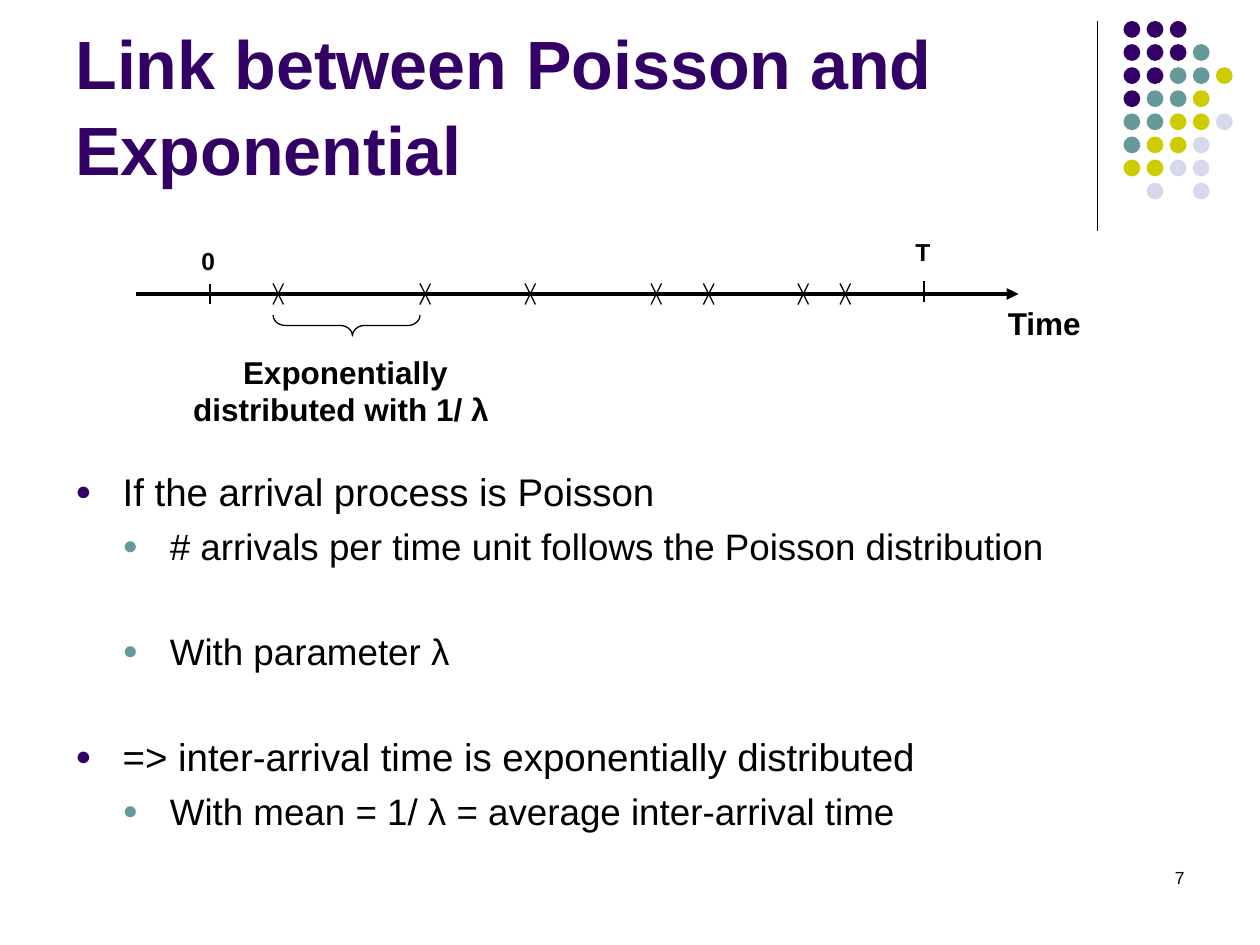
import pptx
import pptx.util
import pptx.dml.color
import pptx.enum.shapes
import pptx.enum.text
import pptx.oxml.ns
import lxml.etree

PX = 7620  # 120 px to the inch
BLACK, PURPLE, TEAL = "000000", "330066", "669999"
color = pptx.dml.color.RGBColor.from_string
qn = pptx.oxml.ns.qn
Align = pptx.enum.text.PP_ALIGN
Anchor = pptx.enum.text.MSO_ANCHOR
Shape = pptx.enum.shapes.MSO_SHAPE

presentation = pptx.Presentation()
presentation.slide_width = 1200 * PX
presentation.slide_height = 900 * PX
slide = presentation.slides.add_slide(presentation.slide_layouts[6])


def add_text(box, text, size=18, bold=False, fill=BLACK, align=Align.LEFT,
             anchor=Anchor.TOP, wrap=True, spacing=1.0):
    """Add a text box at box (left, top, width, height); each line is a paragraph."""
    shape = slide.shapes.add_textbox(*(value * PX for value in box))
    frame = shape.text_frame
    frame.word_wrap = wrap
    frame.vertical_anchor = anchor
    frame.text = text
    for paragraph in frame.paragraphs:
        paragraph.alignment = align
        paragraph.line_spacing = spacing
        font = paragraph.font
        font.name, font.size, font.bold = "Arial", pptx.util.Pt(size), bold
        font.color.rgb = color(fill)
    return frame


def add_line(x1, y1, x2, y2, width=0.75):
    line = slide.shapes.add_connector(
        pptx.enum.shapes.MSO_CONNECTOR.STRAIGHT, x1 * PX, y1 * PX, x2 * PX, y2 * PX)
    line.line.color.rgb = color(BLACK)
    line.line.width = pptx.util.Pt(width)
    lxml.etree.SubElement(line._element.spPr, qn("a:effectLst"))
    return line


# Corner decoration: one letter per dot, a space where there is none
add_line(1045, 20, 1045, 220)
dot_colors = {"p": PURPLE, "t": TEAL, "y": "CCCC00", "l": "D8D8EC"}
dot_rows = ["ppp", "pppt", "pptty", "ptty", "ttyyl", "tyyl", "yyll", " l l"]
for row, letters in enumerate(dot_rows):
    for column, letter in enumerate(letters):
        if letter == " ":
            continue
        dot = slide.shapes.add_shape(
            Shape.OVAL, (1070 + 22 * column) * PX, (20 + 22 * row) * PX, 16 * PX, 16 * PX)
        dot.shadow.inherit = False
        dot.fill.solid()
        dot.fill.fore_color.rgb = color(dot_colors[letter])
        dot.line.fill.background()

add_text((860, 820, 280, 60), "7", size=10, align=Align.RIGHT)
add_text((60, 16, 990, 170), "Link between Poisson and Exponential", size=39, bold=True,
         fill=PURPLE, anchor=Anchor.BOTTOM, spacing=1.05)

# Bullets: level, space before in points, text
bullets = [
    (0, 2, "If the arrival process is Poisson"),
    (1, 5.5, "# arrivals per time unit follows the Poisson distribution"),
    (1, 34.5, "With parameter λ"),
    (0, 34.5, "=> inter-arrival time is exponentially distributed"),
    (1, 5.5, "With mean = 1/ λ = average inter-arrival time"),
]
body = add_text((60, 440, 1080, 365), "\n".join(text for _, _, text in bullets))
for paragraph, (level, space, _) in zip(body.paragraphs, bullets):
    paragraph.level = level
    paragraph.space_before = pptx.util.Pt(space)
    paragraph.font.size = pptx.util.Pt(22 - level)
    properties = paragraph._p.get_or_add_pPr()
    properties.set("marL", str((level + 1) * 45 * PX))
    properties.set("indent", str(-45 * PX))
    bullet_parts = [
        lxml.etree.Element(qn("a:buClr")),
        lxml.etree.Element(qn("a:buSzPct"), val="70000"),
        lxml.etree.Element(qn("a:buFont"), typeface="Arial"),
        lxml.etree.Element(qn("a:buChar"), char="●"),
    ]
    lxml.etree.SubElement(bullet_parts[0], qn("a:srgbClr"), val=(PURPLE, TEAL)[level])
    for part in bullet_parts:
        properties.find(qn("a:defRPr")).addprevious(part)

# Time axis with its start, its end and the arrivals
axis = add_line(130, 280, 970, 280, width=2.25)
lxml.etree.SubElement(axis.line._get_or_add_ln(), qn("a:tailEnd"), type="triangle")
add_text((948, 284, 94, 48), "Time", bold=True, wrap=False)
add_line(200, 270, 200, 290)
add_text((180, 228, 37, 40), "0", size=14, bold=True, wrap=False)
for left in (260, 400, 500, 620, 670, 760, 800):
    add_line(left, 270, left + 10, 290)
    add_line(left, 290, left + 10, 270)
add_line(880, 268, 880, 288)
end_label = add_text((840, 220, 150, 40), "T", size=14, bold=True)
end_label.paragraphs[0]._p.get_or_add_pPr().set("marL", str(20 * PX))

# Gap between two arrivals
brace = slide.shapes.add_shape(Shape.RIGHT_BRACE, 320 * PX, 240 * PX, 20 * PX, 140 * PX)
brace.rotation = 90
brace.adjustments[0] = 0.58
brace.adjustments[1] = 0.46
brace.shadow.inherit = False
brace.fill.background()
brace.line.color.rgb = color(BLACK)
brace.line.width = pptx.util.Pt(0.75)
add_text((172, 330, 314, 84), "Exponentially\ndistributed with 1/ λ ", bold=True,
         align=Align.CENTER, wrap=False)

presentation.save("out.pptx")
